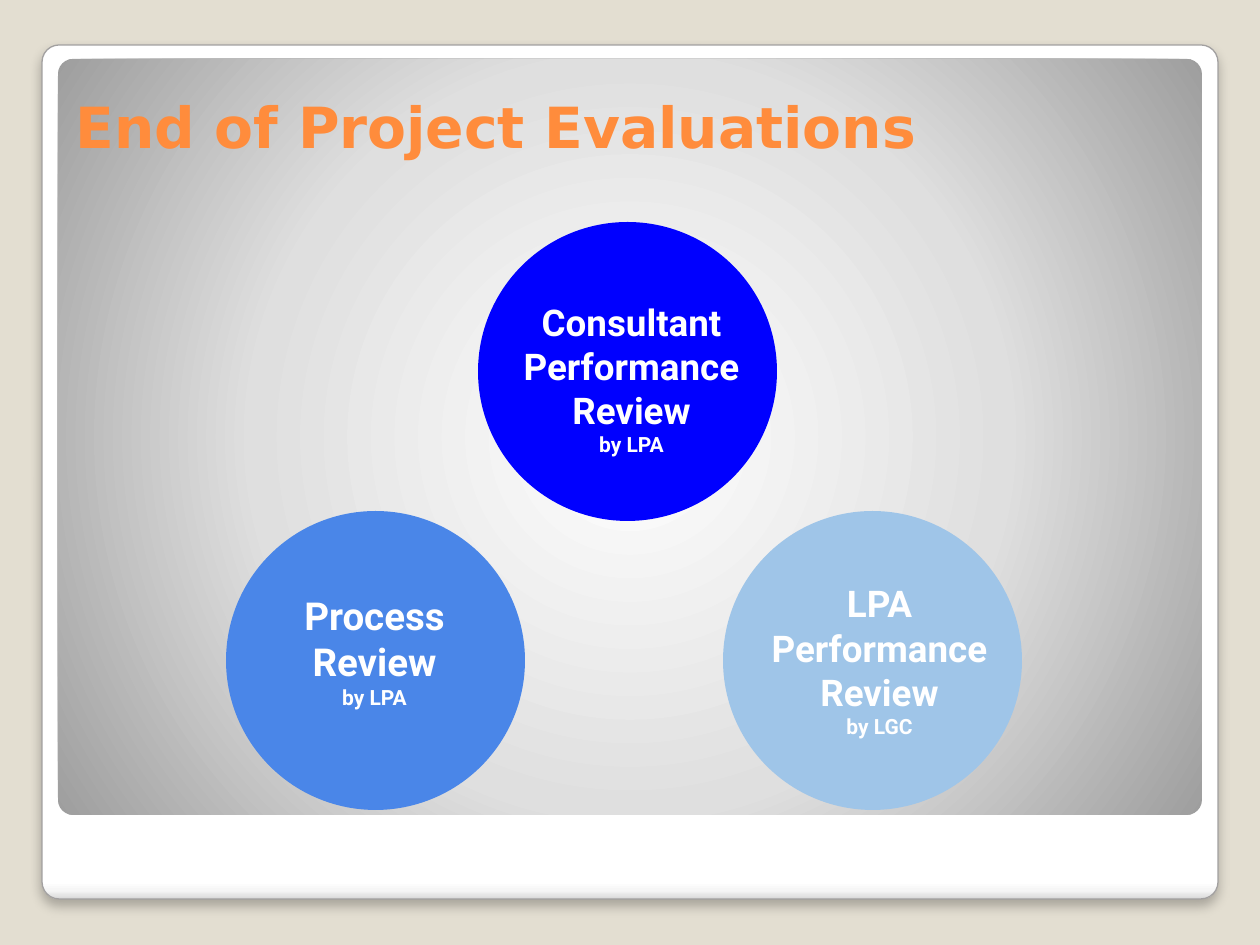
from dataclasses import dataclass

from pptx import Presentation
from pptx.dml.color import RGBColor
from pptx.enum.shapes import MSO_SHAPE
from pptx.enum.text import MSO_ANCHOR, PP_ALIGN
from pptx.oxml import parse_xml
from pptx.oxml.ns import nsdecls
from pptx.util import Pt

ROUNDED, OVAL = MSO_SHAPE.ROUNDED_RECTANGLE, MSO_SHAPE.OVAL
TOP, MIDDLE = MSO_ANCHOR.TOP, MSO_ANCHOR.MIDDLE
CENTER = PP_ALIGN.CENTER
EMU_PER_PX = 914400 / 126
LINEAR = '<a:lin ang="5400000" scaled="0"/>'
RADIAL = ('<a:path path="circle"><a:fillToRect l="50000" t="50000" '
          'r="50000" b="50000"/></a:path>')


@dataclass(frozen=True)
class Theme:
    background: str = "E3DED1"
    frame_line: str = "A2A0A0"
    frame_stops: tuple = ((0, "FFFFFF"), (98, "FFFFFF"), (99, "F6F6F6"), (100, "D8D8D8"))
    panel_stops: tuple = ((0, "FFFFFF"), (55, "DFDFDF"), (100, "9E9E9E"))
    title: str = "FF8C3C"
    circle_text: str = "FFFFFF"
    consultant: str = "0000FF"
    process: str = "4A86E8"
    agency: str = "9FC5E8"
    title_font: str = "DejaVu Sans"
    body_font: str = "Roboto"
    title_size: float = 32.4
    review_size: int = 21
    process_size: int = 22
    reviewer_size: int = 12


THEME = Theme()


def px(*lengths):
    return [round(length * EMU_PER_PX) for length in lengths]


def rgb(color):
    return RGBColor.from_string(color)


def style_font(paragraph, name, size, color):
    font = paragraph.font
    font.name, font.size, font.bold = name, Pt(size), True
    font.color.rgb = rgb(color)


def add_gradient_card(slide, box, stops, direction):
    card = slide.shapes.add_shape(ROUNDED, *px(*box))
    card.adjustments[0] = 0.02
    card.shadow.inherit = False
    card.line.fill.background()
    stop_xml = "".join(
        f'<a:gs pos="{position * 1000}"><a:srgbClr val="{color}"/></a:gs>'
        for position, color in stops)
    gradient = parse_xml(f'<a:gradFill {nsdecls("a")} rotWithShape="1">'
                         f'<a:gsLst>{stop_xml}</a:gsLst>{direction}</a:gradFill>')
    card.element.spPr.find("{*}prstGeom").addnext(gradient)
    return card


def add_background(slide, box):
    """Draw the shadowed white frame and the grey panel inside it."""
    left, top, width, height = box
    fill = slide.background.fill
    fill.solid()
    fill.fore_color.rgb = rgb(THEME.background)

    frame = add_gradient_card(slide, box, THEME.frame_stops, LINEAR)
    frame.line.color.rgb = rgb(THEME.frame_line)
    frame.line.width = Pt(0.75)
    frame.element.spPr.find("{*}effectLst").append(parse_xml(
        f'<a:outerShdw {nsdecls("a")} blurRad="{Pt(6)}" dist="{Pt(4)}" '
        'dir="5400000" algn="t" rotWithShape="0"><a:srgbClr val="000000">'
        '<a:alpha val="25000"/></a:srgbClr></a:outerShdw>'))

    margin = 16
    panel_box = (left + margin, top + 14, width - 2 * margin, 756)
    add_gradient_card(slide, panel_box, THEME.panel_stops, RADIAL)


def add_title(slide, box, text):
    frame = slide.shapes.add_textbox(*px(*box)).text_frame
    frame.word_wrap = True
    frame.vertical_anchor = TOP
    frame.text = text
    style_font(frame.paragraphs[0], THEME.title_font, THEME.title_size, THEME.title)


def add_review_circle(slide, box, review, reviewer, color, size, label_box):
    """Group a circle with its label; label_box is relative to the circle."""
    left, top, width, height = box
    label_left, label_top, label_width, label_height = label_box
    group = slide.shapes.add_group_shape()

    circle = group.shapes.add_shape(OVAL, *px(left, top, width, height))
    circle.shadow.inherit = False
    circle.fill.solid()
    circle.fill.fore_color.rgb = rgb(color)
    circle.line.fill.background()

    label = group.shapes.add_textbox(
        *px(left + label_left, top + label_top, label_width, label_height))
    frame = label.text_frame
    frame.word_wrap = True
    frame.vertical_anchor = MIDDLE
    frame.text = f"{review}\n{reviewer}"
    for paragraph, text_size in zip(frame.paragraphs, (size, THEME.reviewer_size)):
        paragraph.alignment = CENTER
        style_font(paragraph, THEME.body_font, text_size, THEME.circle_text)


def add_reviews(slide, box):
    """Arrange the three reviews as a triangle: one above, two below."""
    left, top, width, height = box
    diameter = 299
    bottom_row = top + height - diameter
    right_column = left + width - diameter
    middle_column = left + 252
    reviews = (
        (middle_column, top, "Consultant Performance Review", "by LPA",
         THEME.consultant, THEME.review_size, (4, 66, 299, 180)),
        (right_column, bottom_row, "LPA Performance Review", "by LGC",
         THEME.agency, THEME.review_size, (14, 59, 285, 180)),
        (left, bottom_row, "Process Review", "by LPA",
         THEME.process, THEME.process_size, (26, 50, 245, 180)),
    )
    for x, y, *content in reviews:
        add_review_circle(slide, (x, y, diameter, diameter), *content)


def main():
    presentation = Presentation()
    presentation.slide_width, presentation.slide_height = px(1260, 945)
    slide = presentation.slides.add_slide(presentation.slide_layouts[6])
    add_background(slide, (42, 45, 1176, 854))
    add_title(slide, (63, 86, 1128, 145), "End of Project Evaluations")
    add_reviews(slide, (226, 222, 796, 588))
    presentation.save("out.pptx")


if __name__ == "__main__":
    main()
